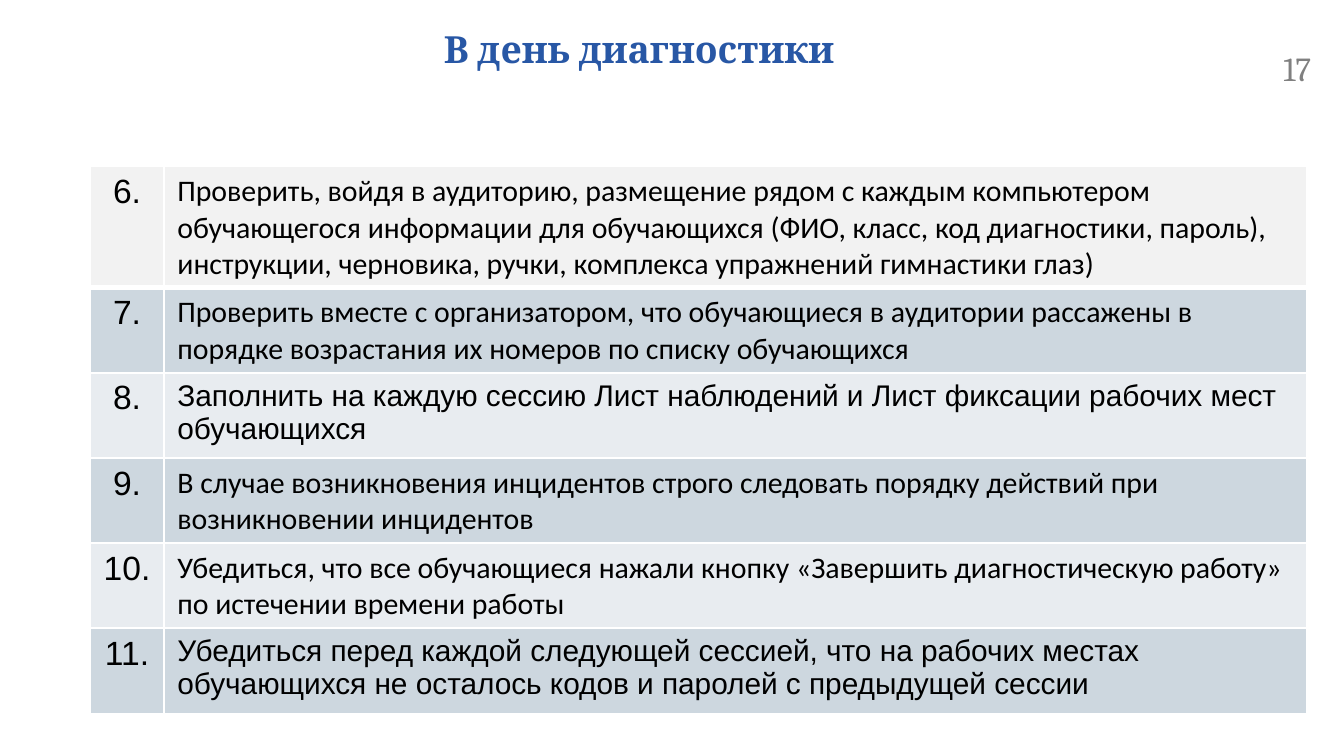
from lxml.etree import SubElement
from pptx import Presentation
from pptx.dml.color import RGBColor
from pptx.enum.text import MSO_ANCHOR as Anchor, PP_ALIGN as Align
from pptx.oxml.ns import qn
from pptx.util import Inches, Pt

COLUMN_WIDTHS = (0.55, 8.5)
ROW_HEIGHT = 0.41
STEPS = [
    ("6.", "Проверить, войдя в аудиторию, размещение рядом с каждым компьютером "
     "обучающегося информации для обучающихся (ФИО, класс, код диагностики, пароль), "
     "инструкции, черновика, ручки, комплекса упражнений гимнастики глаз)", "Calibri"),
    ("7.", "Проверить вместе с организатором, что обучающиеся в аудитории рассажены в "
     "порядке возрастания их номеров по списку обучающихся", "Calibri"),
    ("8.", "Заполнить на каждую сессию Лист наблюдений и Лист фиксации рабочих мест "
     "обучающихся", "Arial"),
    ("9.", "В случае возникновения инцидентов строго следовать порядку действий при "
     "возникновении инцидентов", "Calibri"),
    ("10.", "Убедиться, что все обучающиеся нажали кнопку «Завершить диагностическую "
     "работу» по истечении времени работы", "Calibri"),
    ("11.", "Убедиться перед каждой следующей сессией, что на рабочих местах "
     "обучающихся не осталось кодов и паролей с предыдущей сессии", "Arial"),
]


def color(value):
    """Turn a hex string into a colour."""
    return RGBColor.from_string(value)


def write(frame, text, font, size, ink="000000", bold=False, align=Align.LEFT):
    """Write one run into the first paragraph and return the paragraph."""
    para = frame.paragraphs[0]
    para.alignment = align
    span = para.add_run()
    span.text = text
    span.font.name = font
    span.font.size = Pt(size)
    span.font.bold = bold
    span.font.color.rgb = color(ink)
    return para


def add_text(page, left, top, width, height, text, *style, **options):
    """Add a wrapping text box and return its paragraph."""
    box = page.shapes.add_textbox(Inches(left), Inches(top), Inches(width), Inches(height))
    frame = box.text_frame
    frame.word_wrap = True
    frame.vertical_anchor = Anchor.TOP
    return write(frame, text, *style, **options)


def style_cell(cell, fill, bottom):
    """Give a cell white borders and a solid fill."""
    properties = cell._tc.get_or_add_tcPr()
    for side, width in (("L", 1), ("R", 1), ("T", 1), ("B", bottom)):
        line = SubElement(properties, qn(f"a:ln{side}"), w=str(Pt(width)))
        SubElement(SubElement(line, qn("a:solidFill")), qn("a:srgbClr"), val="FFFFFF")
    cell.fill.solid()
    cell.fill.fore_color.rgb = color(fill)
    cell.vertical_anchor = Anchor.TOP


def add_steps(page, left, top):
    """Add the table of numbered steps with alternating fills."""
    table = page.shapes.add_table(len(STEPS), 2, Inches(left), Inches(top),
                                  Inches(sum(COLUMN_WIDTHS)),
                                  Inches(ROW_HEIGHT * len(STEPS))).table
    table.first_row = table.horz_banding = False
    for column, width in zip(table.columns, COLUMN_WIDTHS):
        column.width = Inches(width)
    for index, (number, text, font) in enumerate(STEPS):
        fill = "F2F2F2" if index == 0 else ("E8ECF0", "CDD7DF")[index % 2]
        number_cell, text_cell = table.rows[index].cells
        for cell in (number_cell, text_cell):
            style_cell(cell, fill, 3 if index == 0 else 1)
        write(number_cell.text_frame, number, "Arial", 18, align=Align.CENTER)
        write(text_cell.text_frame, text, font, 16)


def main():
    """Build the slide and save the deck."""
    deck = Presentation()
    deck.slide_width = Inches(10)
    deck.slide_height = int(deck.slide_width * 9 / 16)
    page = deck.slides.add_slide(deck.slide_layouts[6])
    title = add_text(page, 2.62, 0.21, 4.27, 0.55, "В день диагностики",
                     "Cambria", 20, "2857A5", bold=True, align=Align.CENTER)
    title.line_spacing = 0.8
    add_steps(page, 0.67, 1.24)
    add_text(page, 9.45, 0.31, 0.55, 0.3, "17", "Cambria", 18, "808080")
    deck.save("out.pptx")


if __name__ == "__main__":
    main()
